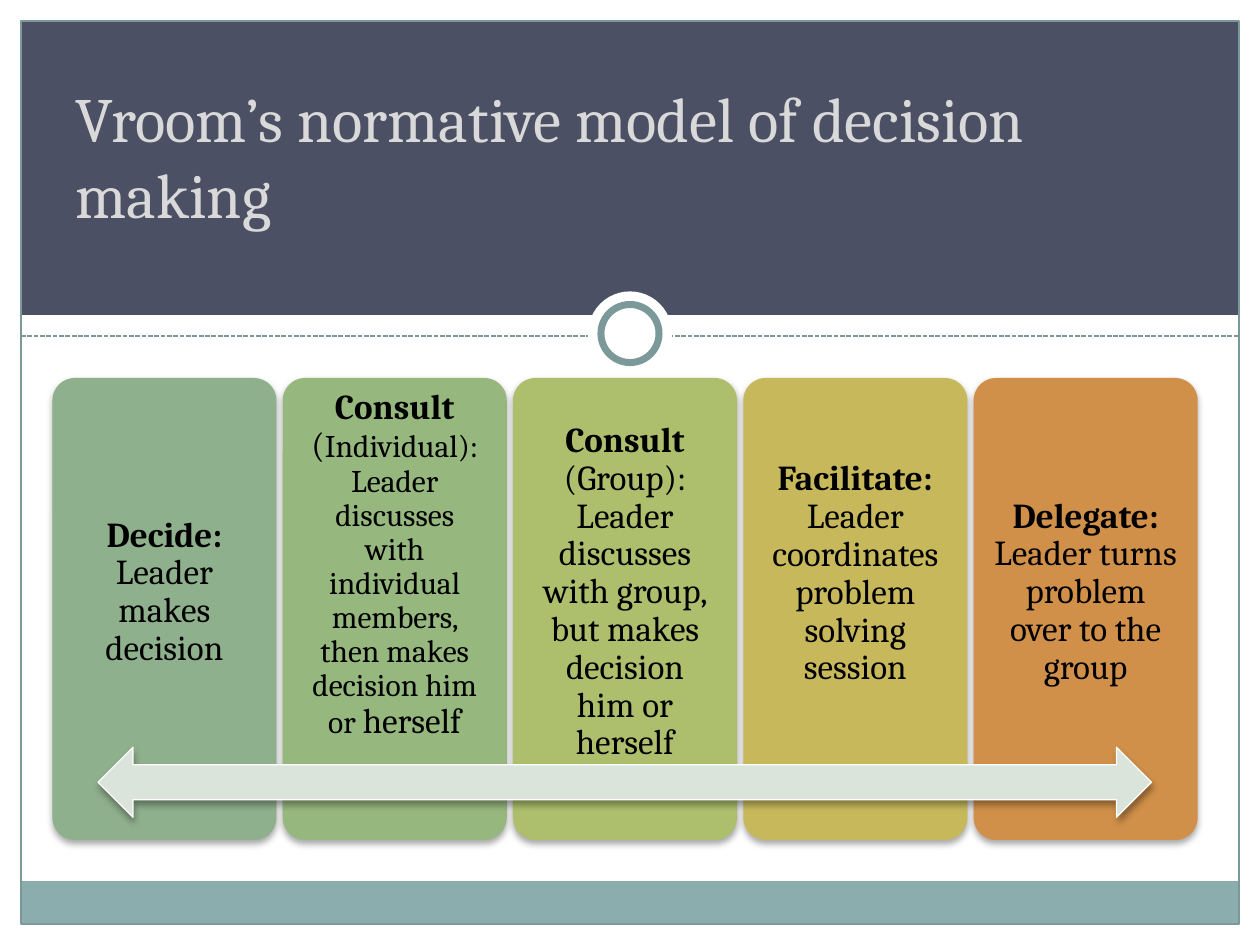
from lxml import etree
from pptx import Presentation
from pptx.dml.color import RGBColor
from pptx.enum.dml import MSO_LINE
from pptx.enum.shapes import MSO_CONNECTOR, MSO_SHAPE
from pptx.enum.text import MSO_ANCHOR, PP_ALIGN
from pptx.oxml import parse_xml
from pptx.oxml.ns import nsdecls, qn
from pptx.util import Pt

RECTANGLE = MSO_SHAPE.RECTANGLE
OVAL = MSO_SHAPE.OVAL
ROUNDED = MSO_SHAPE.ROUNDED_RECTANGLE
DOUBLE_ARROW = MSO_SHAPE.LEFT_RIGHT_ARROW
STRAIGHT = MSO_CONNECTOR.STRAIGHT
DASH = MSO_LINE.SQUARE_DOT
TOP, MIDDLE = MSO_ANCHOR.TOP, MSO_ANCHOR.MIDDLE
LEFT, CENTER = PP_ALIGN.LEFT, PP_ALIGN.CENTER

FONT = "Cambria"
TEAL = "7C999A"
WHITE = "FFFFFF"
CARD_LEFT, CARD_TOP, CARD_WIDTH, CARD_HEIGHT, CARD_PITCH = 30, 216, 128, 264, 131.6

# (fill, bottom inset, runs as (text, size, bold))
STYLES = [
    ("8FB08C", 19, [("Decide: ", 20, True), ("Leader makes decision", 20, False)]),
    ("96B77D", 50, [
        ("Consult", 20, True),
        (" (", 20, False),
        ("Individual): Leader discusses with individual members, "
         "then makes decision him or ", 18, False),
        ("herself", 20, False),
    ]),
    ("ADBF6C", 19, [
        ("Consult", 20, True),
        (" (Group): Leader discusses with group, but makes decision him or herself",
         20, False),
    ]),
    ("C7B95B", 40, [
        ("Facilitate: ", 20, True),
        ("Leader coordinates problem solving session", 20, False),
    ]),
    ("D19049", 19, [
        ("Delegate: ", 20, True),
        ("Leader turns problem over to the group", 20, False),
    ]),
]


def color(value):
    """Return the colour for a hex string."""
    return RGBColor.from_string(value)


def add_shape(slide, kind, left, top, width, height, fill=None, line=None, weight=0.75):
    """Add a flat preset shape with an optional fill and outline."""
    shape = slide.shapes.add_shape(kind, Pt(left), Pt(top), Pt(width), Pt(height))
    shape.shadow.inherit = False
    if fill:
        shape.fill.solid()
        shape.fill.fore_color.rgb = color(fill)
    else:
        shape.fill.background()
    if line:
        shape.line.color.rgb = color(line)
        shape.line.width = Pt(weight)
    else:
        shape.line.fill.background()
    return shape


def add_shadow(shape):
    """Give a shape a soft shadow below it."""
    effects = shape.element.spPr.find(qn("a:effectLst"))
    effects.append(parse_xml(
        f'<a:outerShdw {nsdecls("a")} blurRad="{Pt(4)}" dist="{Pt(2)}" dir="5400000" '
        'rotWithShape="0"><a:srgbClr val="000000"><a:alpha val="35000"/>'
        '</a:srgbClr></a:outerShdw>'))


def add_dashed_line(slide, left, right, top):
    """Add a horizontal dashed line."""
    line = slide.shapes.add_connector(STRAIGHT, Pt(left), Pt(top), Pt(right), Pt(top))
    line.line.color.rgb = color(TEAL)
    line.line.width = Pt(0.9)
    line.line.dash_style = DASH
    etree.SubElement(line.element.spPr, qn("a:effectLst"))


def add_card(slide, index, fill, bottom, runs):
    """Add one decision style as a rounded card with its text."""
    card = add_shape(slide, ROUNDED, CARD_LEFT + index * CARD_PITCH, CARD_TOP,
                     CARD_WIDTH, CARD_HEIGHT, fill)
    card.adjustments[0] = 0.1
    add_shadow(card)
    frame = card.text_frame
    frame.word_wrap = True
    frame.vertical_anchor = MIDDLE
    frame.margin_left = frame.margin_right = Pt(8)
    frame.margin_top, frame.margin_bottom = 0, Pt(bottom)
    paragraph = frame.paragraphs[0]
    paragraph.alignment = CENTER
    paragraph.line_spacing = 0.9
    paragraph.font.name = FONT
    paragraph.font.color.rgb = color("000000")
    for text, size, bold in runs:
        run = paragraph.add_run()
        run.text = text
        run.font.size = Pt(size)
        run.font.bold = bold


def add_frame(slide):
    """Add the title band, footer band, border and ring."""
    add_shape(slide, RECTANGLE, 12, 12, 696, 168, "4B5064")
    add_shape(slide, RECTANGLE, 12, 503.5, 696, 24.5, "8CADAE")
    add_shape(slide, RECTANGLE, 12, 12, 696, 516, line=TEAL)
    add_dashed_line(slide, 12, 708, 192)
    add_shape(slide, OVAL, 336, 166.5, 48, 48, WHITE)
    add_shape(slide, OVAL, 343.4, 174, 33.2, 33.2, WHITE, TEAL, 4)


def set_title(slide, text):
    """Place the title in front of its band and format it."""
    title = slide.shapes.title
    title.element.getparent().append(title.element)
    title.left, title.top, title.width, title.height = Pt(36), Pt(42), Pt(618), Pt(117)
    frame = title.text_frame
    frame.text = text
    frame.word_wrap = True
    frame.vertical_anchor = TOP
    paragraph = frame.paragraphs[0]
    paragraph.alignment = LEFT
    paragraph.font.name = FONT
    paragraph.font.size = Pt(36)
    paragraph.font.color.rgb = color("D9D9D9")


def main():
    """Build the slide and save it."""
    presentation = Presentation()
    presentation.slide_width, presentation.slide_height = Pt(720), Pt(540)
    slide = presentation.slides.add_slide(presentation.slide_layouts[5])
    add_frame(slide)
    for index, (fill, bottom, runs) in enumerate(STYLES):
        add_card(slide, index, fill, bottom, runs)
    arrow = add_shape(slide, DOUBLE_ARROW, 56, 427, 602, 40, "DBE4DA", WHITE)
    add_shadow(arrow)
    set_title(slide, "Vroom’s normative model of decision making")
    presentation.save("out.pptx")


if __name__ == "__main__":
    main()
